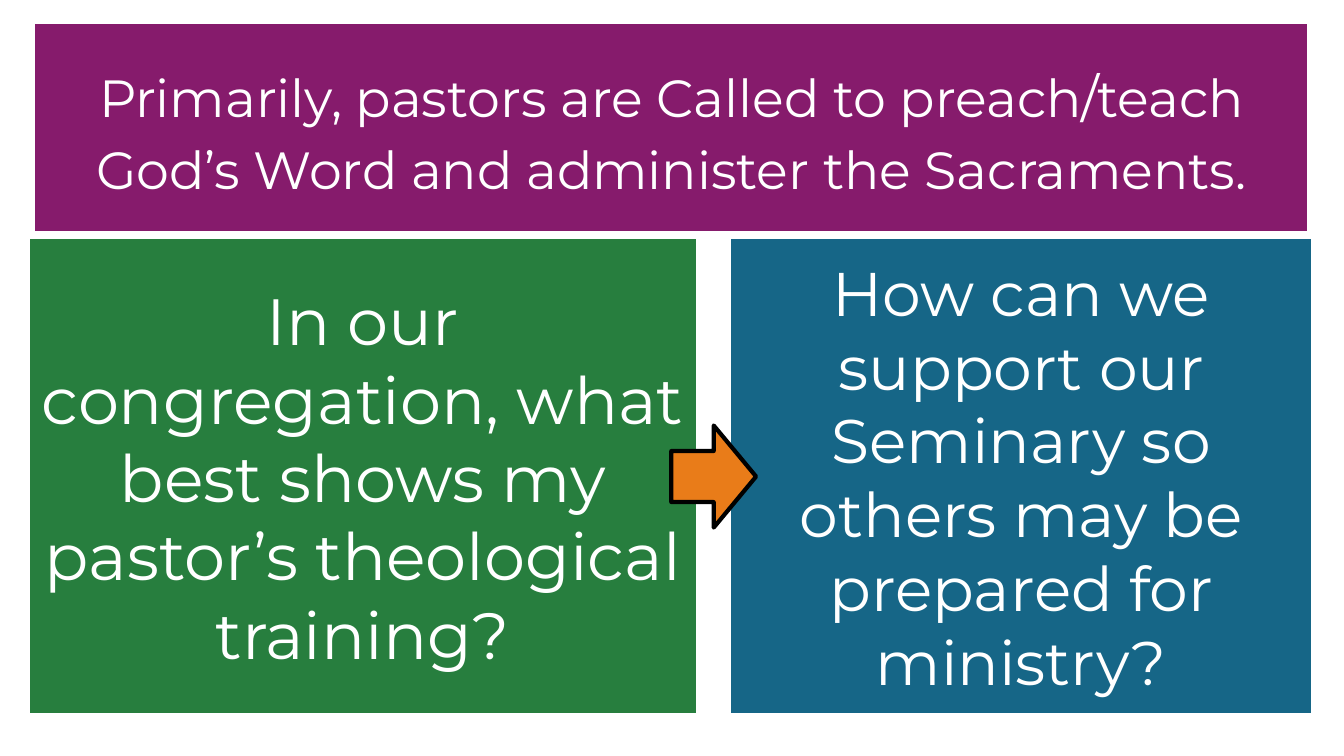
from dataclasses import dataclass

from pptx import Presentation
from pptx.dml.color import RGBColor
from pptx.enum.shapes import MSO_SHAPE
from pptx.enum.text import MSO_ANCHOR, PP_ALIGN
from pptx.util import Pt

RECTANGLE = MSO_SHAPE.RECTANGLE
DOWN_ARROW = MSO_SHAPE.DOWN_ARROW
MIDDLE = MSO_ANCHOR.MIDDLE
CENTER = PP_ALIGN.CENTER


@dataclass(frozen=True)
class Theme:
    font: str = "Montserrat"
    white: str = "FFFFFF"
    black: str = "000000"
    purple: str = "861B6C"
    green: str = "277E3E"
    blue: str = "166687"
    orange: str = "E97C19"
    statement_size: float = 28
    question_size: float = 35
    support_size: float = 33
    inset: float = 7.2


THEME = Theme()


def add_filled_shape(slide, kind, box, fill, line, line_width):
    shape = slide.shapes.add_shape(kind, *(Pt(length) for length in box))
    shape.shadow.inherit = False
    shape.fill.solid()
    shape.fill.fore_color.rgb = RGBColor.from_string(fill)
    shape.line.color.rgb = RGBColor.from_string(line)
    shape.line.width = Pt(line_width)
    return shape


def add_panel(slide, box, fill, line_width, text, size, line_spacing=1.0):
    shape = add_filled_shape(slide, RECTANGLE, box, fill, THEME.white, line_width)
    frame = shape.text_frame
    frame.word_wrap = True
    frame.vertical_anchor = MIDDLE
    frame.margin_left = frame.margin_right = Pt(THEME.inset)
    frame.margin_top = frame.margin_bottom = Pt(THEME.inset)
    frame.text = text
    paragraph = frame.paragraphs[0]
    paragraph.alignment = CENTER
    paragraph.line_spacing = line_spacing
    font = paragraph.runs[0].font
    font.name = THEME.font
    font.size = Pt(size)
    font.color.rgb = RGBColor.from_string(THEME.white)


def add_right_pointing_arrow(slide, box):
    arrow = add_filled_shape(slide, DOWN_ARROW, box, THEME.orange, THEME.black, 2.25)
    arrow.rotation = 270


def main():
    presentation = Presentation()
    presentation.slide_width = Pt(720)
    presentation.slide_height = Pt(405)
    slide = presentation.slides.add_slide(presentation.slide_layouts[6])

    # Statement across the top
    add_panel(slide, (15.8, 10, 687.6, 116.7), THEME.purple, 6,
              "Primarily, pastors are Called to preach/teach God’s Word "
              "and administer the Sacraments.",
              THEME.statement_size, line_spacing=1.15)

    # Two questions side by side
    top, height = 126.7, 257
    add_panel(slide, (14.4, top, 360, height), THEME.green, 3,
              "In our congregation, what best shows my pastor’s "
              "theological training?", THEME.question_size)
    add_panel(slide, (390.2, top, 313.9, height), THEME.blue, 3,
              "How can we support our Seminary so others may be "
              "prepared for ministry?", THEME.support_size)

    # Arrow from the first question to the second
    add_right_pointing_arrow(slide, (355, 232.6, 54.7, 45.4))

    presentation.save("out.pptx")


if __name__ == "__main__":
    main()
